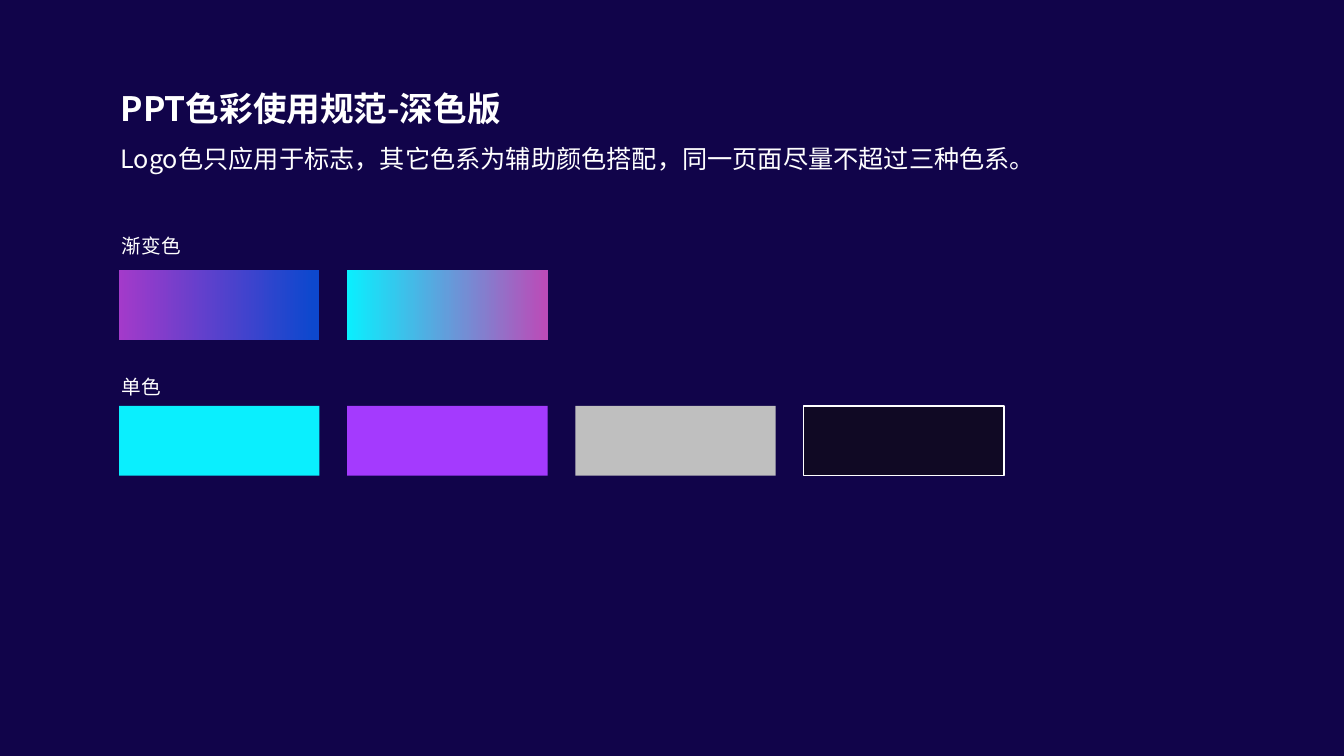
import pptx
import pptx.util
import pptx.dml.color
import pptx.enum.shapes
import pptx.enum.text
import pptx.oxml.ns
import lxml.etree

Cm = pptx.util.Cm
FONT = "Noto Sans CJK SC"
COLORS = {
    "background": "11044A",
    "white": "FFFFFF",
    "orchid": "A33ACA",
    "blue": "0D48CE",
    "cyan": "0AEFFE",
    "pink": "BA4CB8",
    "violet": "A43AFE",
    "gray": "BFBFBF",
    "ink": "100924",
}


def rgb(name):
    return pptx.dml.color.RGBColor.from_string(COLORS[name])


def write_text(box, text, size, bold=False):
    frame = box.text_frame
    frame.word_wrap = True
    frame.auto_size = pptx.enum.text.MSO_AUTO_SIZE.NONE
    frame.vertical_anchor = pptx.enum.text.MSO_ANCHOR.TOP
    para = frame.paragraphs[0]
    para.alignment = pptx.enum.text.PP_ALIGN.LEFT
    span = para.add_run()
    span.text = text
    span.font.size = pptx.util.Pt(size)
    span.font.bold = bold
    span.font.color.rgb = rgb("white")
    span.font.name = FONT
    east_asian = lxml.etree.SubElement(span.font._element, pptx.oxml.ns.qn("a:ea"))
    east_asian.set("typeface", FONT)


deck = pptx.Presentation()
deck.slide_width = Cm(33.87)
deck.slide_height = Cm(19.05)
page = deck.slides.add_slide(deck.slide_layouts[5])
page.background.fill.solid()
page.background.fill.fore_color.rgb = rgb("background")

title = page.shapes.title
title.left, title.top, title.width, title.height = Cm(2.79), Cm(2.08), Cm(11), Cm(1.27)
write_text(title, "PPT色彩使用规范-深色版", 24, True)

captions = [
    ("Logo色只应用于标志，其它色系为辅助颜色搭配，同一页面尽量不超过三种色系。", 18, 2.79, 3.48, 25.3, 1.02),
    ("渐变色", 14, 2.82, 5.77, 3.33, 0.86),
    ("单色", 14, 2.82, 9.32, 3.33, 0.86),
]
for text, size, *place in captions:
    box = page.shapes.add_textbox(*map(Cm, place))
    write_text(box, text, size)

swatch_rows = [
    (6.8, [("orchid", "blue", 0.97), ("cyan", "pink", 0.99)]),
    (10.23, ["cyan", "violet", "gray", "ink"]),
]
for top, swatches in swatch_rows:
    for column, paint in enumerate(swatches):
        swatch = page.shapes.add_shape(
            pptx.enum.shapes.MSO_SHAPE.RECTANGLE,
            Cm(3 + 5.75 * column), Cm(top), Cm(5.05), Cm(1.76),
        )
        swatch.shadow.inherit = False
        if isinstance(paint, tuple):
            start, end, position = paint
            swatch.fill.gradient()
            swatch.fill.gradient_angle = 0
            first, last = swatch.fill.gradient_stops
            first.color.rgb, first.position = rgb(start), 0
            last.color.rgb, last.position = rgb(end), position
        else:
            swatch.fill.solid()
            swatch.fill.fore_color.rgb = rgb(paint)
        if paint == "ink":
            swatch.line.color.rgb = rgb("white")
            swatch.line.width = pptx.util.Pt(1)
        else:
            swatch.line.fill.background()

deck.save("out.pptx")
